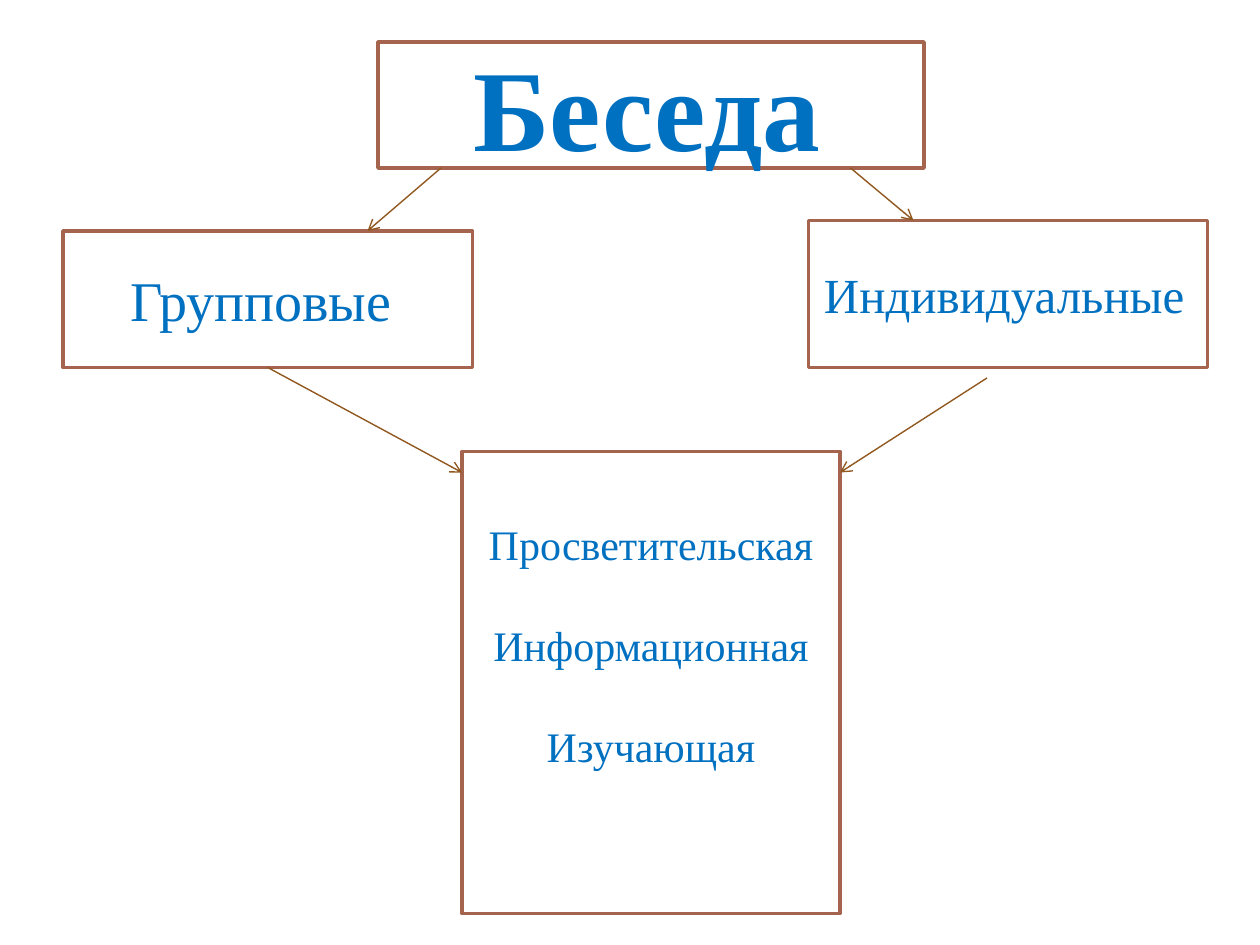
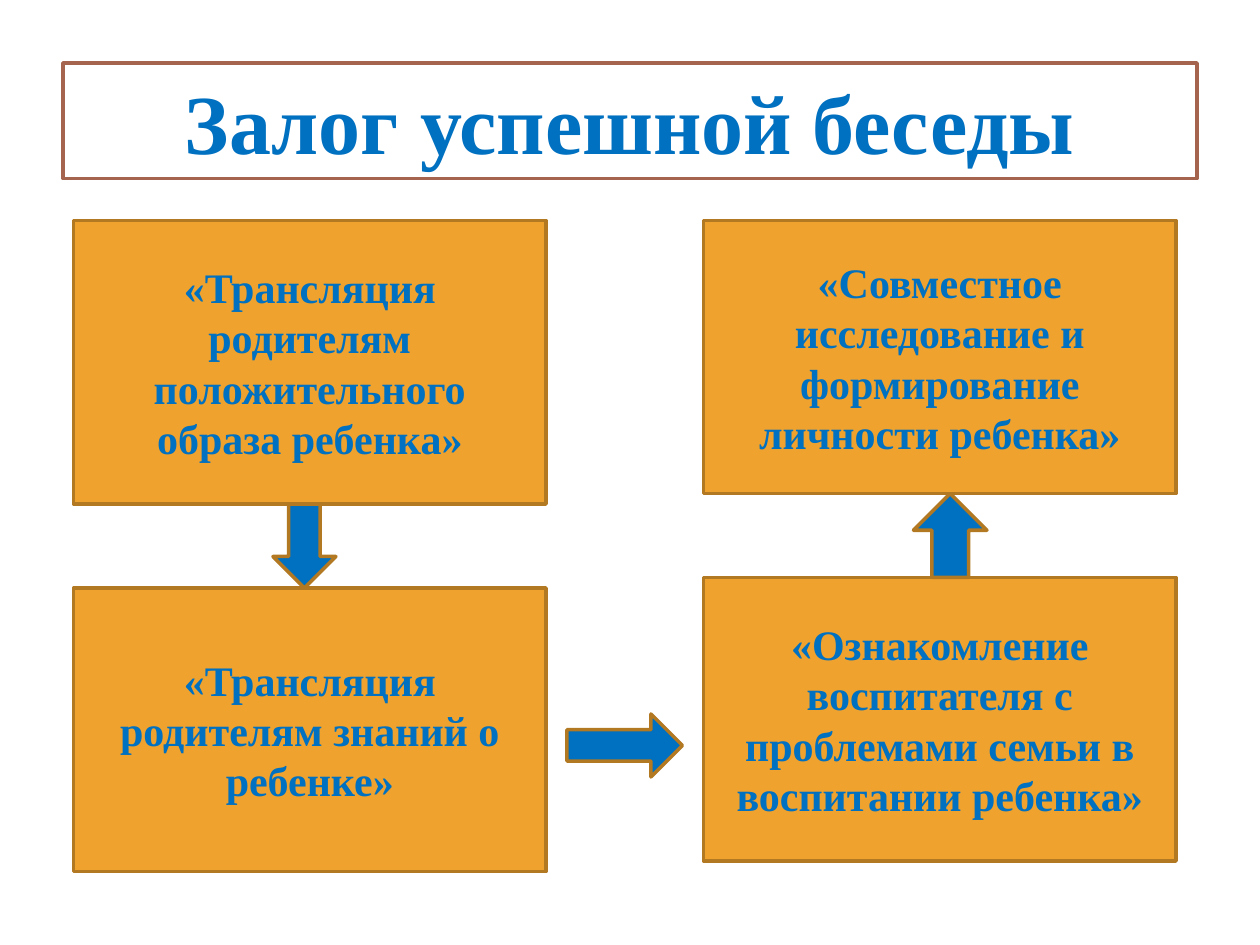
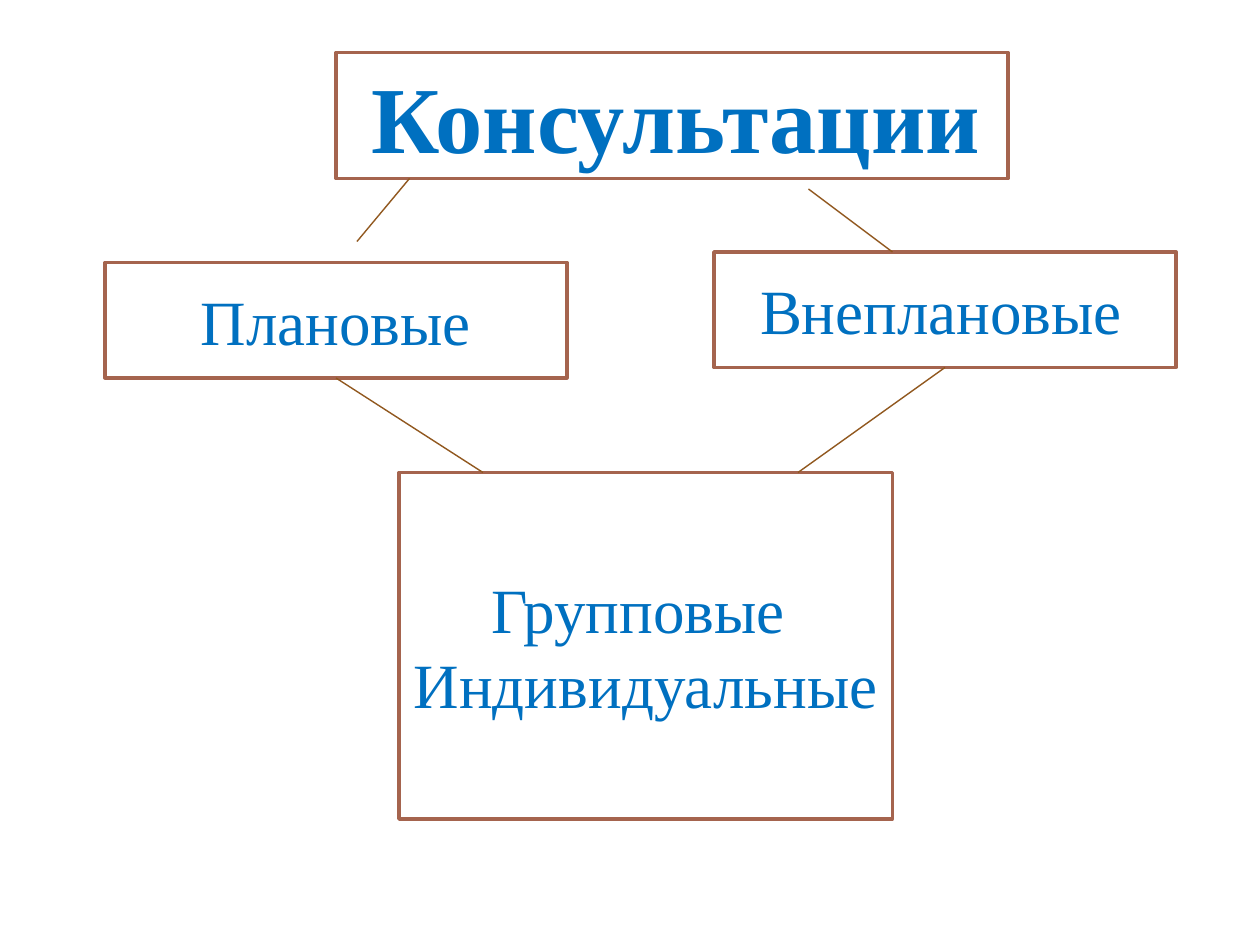
from lxml import etree
from pptx import Presentation
from pptx.dml.color import RGBColor
from pptx.enum.shapes import MSO_CONNECTOR as LINK, MSO_SHAPE as PRESET
from pptx.enum.text import MSO_ANCHOR as ANCHOR, MSO_AUTO_SIZE as AUTOSIZE, PP_ALIGN as ALIGN
from pptx.oxml.ns import qn
from pptx.util import Pt

PX = 9525
FONT = "Times New Roman"
BLUE, WHITE, AMBER = "0070C0", "FFFFFF", "F0A22E"
FRAME, AMBER_EDGE, LINK_BROWN = "A5644E", "B27822", "91581F"
color = RGBColor.from_string


def paint(part, fill, edge):
    part.shadow.inherit = False
    part.fill.solid()
    part.fill.fore_color.rgb = color(fill)
    part.line.color.rgb = color(edge)
    part.line.width = Pt(2)


def write(part, text, size, bold=False, shift=0, lift=0, gap=0):
    frame = part.text_frame
    frame.text = text
    frame.word_wrap = True
    frame.auto_size = AUTOSIZE.NONE
    frame.vertical_anchor = ANCHOR.MIDDLE
    frame.margin_left = (10 + 2 * max(shift, 0)) * PX
    frame.margin_right = (10 + 2 * max(-shift, 0)) * PX
    frame.margin_top = 5 * PX
    frame.margin_bottom = (5 + 2 * lift) * PX
    for index, paragraph in enumerate(frame.paragraphs):
        paragraph.alignment = ALIGN.CENTER
        paragraph.line_spacing = Pt(size * 1.2)
        paragraph.space_before = Pt(gap if index else 0)
        paragraph.space_after = Pt(0)
        font = paragraph.runs[0].font
        font.name, font.size, font.bold = FONT, Pt(size), bold
        font.color.rgb = color(BLUE)


talk = {
    "title": ("Беседа", (288, 32, 416, 96), dict(size=66, shift=-3)),
    "frames": [
        ("Групповые ", (48, 176, 312, 104), dict(size=32)),
        ("Индивидуальные", (616, 168, 304, 112), dict(size=28, shift=-3)),
        ("Просветительская\nИнформационная\nИзучающая", (352, 344, 288, 352),
         dict(size=24, lift=29, gap=28.8)),
    ],
    "links": [(204, 280, 352, 360), (752, 288, 640, 360),
              (336, 128, 280, 176), (648, 128, 696, 168)],
    "arrowheads": True,
}
success = {
    "title": ("Залог успешной беседы", (48, 48, 864, 88), dict(size=48)),
    "steps": [
        ("«Трансляция родителям положительного образа ребенка»", (56, 168, 360, 216)),
        ("«Совместное исследование и формирование личности ребенка»", (536, 168, 360, 208)),
        ("«Трансляция родителям знаний о ребенке»", (56, 448, 360, 216)),
        ("«Ознакомление воспитателя с проблемами семьи в воспитании ребенка»",
         (536, 440, 360, 216)),
    ],
    "arrows": [
        (PRESET.DOWN_ARROW, (208, 384, 48, 64)),
        (PRESET.RIGHT_ARROW, (432, 544, 88, 48)),
        (PRESET.UP_ARROW, (696, 376, 56, 64)),
    ],
}
consultations = {
    "title": ("Консультации", (256, 40, 512, 96), dict(size=54, shift=3)),
    "frames": [
        ("Плановые", (80, 200, 352, 88), dict(size=36)),
        ("Внеплановые", (544, 192, 352, 88), dict(size=36, shift=-3)),
        ("Групповые \nИндивидуальные ", (304, 360, 376, 264), dict(size=36)),
    ],
    "links": [(312, 136, 272, 184), (616, 144, 680, 192),
              (256, 288, 368, 360), (720, 280, 608, 360)],
}

deck = Presentation()
deck.slide_width, deck.slide_height = 960 * PX, 720 * PX

for content in (talk, success, consultations):
    slide = deck.slides.add_slide(deck.slide_layouts[5])
    shapes = slide.shapes

    heading, place, style = content["title"]
    title = shapes.title
    title.left, title.top, title.width, title.height = [n * PX for n in place]
    paint(title, WHITE, FRAME)
    write(title, heading, bold=True, **style)

    for caption, place, style in content.get("frames", []):
        kind = shapes.add_shape(PRESET.RECTANGLE, *[n * PX for n in place])
        paint(kind, WHITE, FRAME)
        write(kind, caption, **style)

    for caption, place in content.get("steps", []):
        step = shapes.add_shape(PRESET.RECTANGLE, *[n * PX for n in place])
        paint(step, AMBER, AMBER_EDGE)
        write(step, caption, size=24, bold=True)

    for preset, place in content.get("arrows", []):
        arrow = shapes.add_shape(preset, *[n * PX for n in place])
        paint(arrow, BLUE, AMBER_EDGE)

    for ends in content.get("links", []):
        link = shapes.add_connector(LINK.STRAIGHT, *[n * PX for n in ends])
        link.line.color.rgb = color(LINK_BROWN)
        link.line.width = Pt(0.79)
        if content.get("arrowheads"):
            etree.SubElement(link.line._get_or_add_ln(), qn("a:tailEnd"), type="arrow")
        etree.SubElement(link._element.spPr, qn("a:effectLst"))

deck.save("out.pptx")
